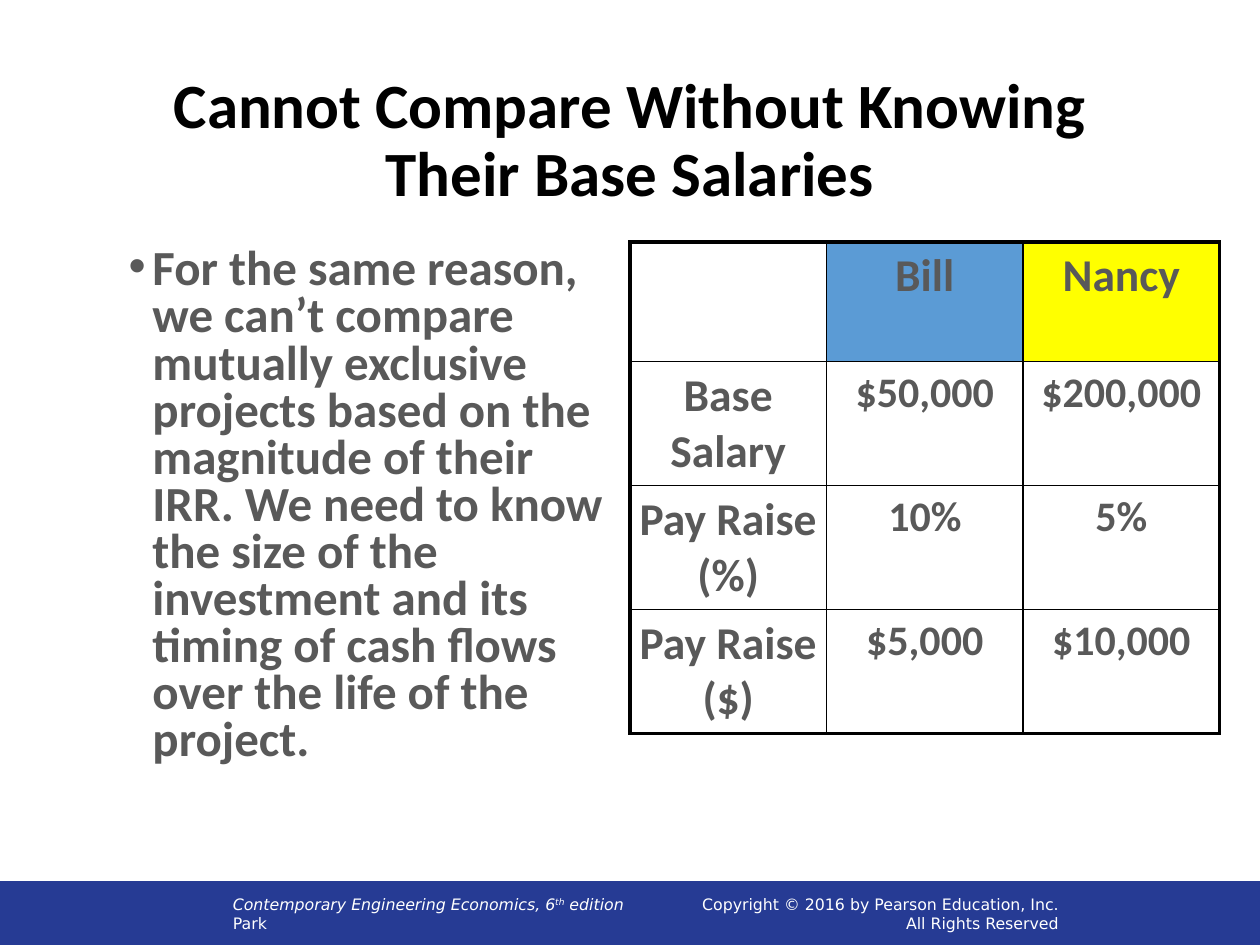
import pptx
import pptx.dml.color
import pptx.enum.shapes
import pptx.enum.text
import pptx.oxml
import pptx.oxml.ns
import pptx.util
from lxml import etree

Inches = pptx.util.Inches
Pt = pptx.util.Pt
RGBColor = pptx.dml.color.RGBColor
Align = pptx.enum.text.PP_ALIGN
Anchor = pptx.enum.text.MSO_ANCHOR

BLACK = RGBColor(0x00, 0x00, 0x00)
WHITE = RGBColor(0xFF, 0xFF, 0xFF)
GRAY = RGBColor(0x59, 0x59, 0x59)
NAVY = RGBColor(0x26, 0x3B, 0x94)
BLUE = RGBColor(0x5B, 0x9B, 0xD5)
YELLOW = RGBColor(0xFF, 0xFF, 0x00)

SALARIES = [
    ["", "Bill", "Nancy"],
    ["Base Salary", "$50,000", "$200,000"],
    ["Pay Raise (%)", "10%", "5%"],
    ["Pay Raise ($)", "$5,000", "$10,000"],
]
HEADER_FILLS = {(0, 1): BLUE, (0, 2): YELLOW}


class SlideBuilder:
    main_font = "Calibri"
    footer_font = "DejaVu Sans"
    thin, thick = Pt(1), Pt(2.25)

    def __init__(self, slide):
        self.slide = slide

    def add_run(self, paragraph, text, size, color, bold=True, italic=False,
                font_name=main_font):
        run = paragraph.add_run()
        run.text = text
        run.font.name = font_name
        run.font.size = Pt(size)
        run.font.bold = bold
        run.font.italic = italic
        run.font.color.rgb = color
        return run

    def place(self, shape, left, top, width, height):
        shape.left, shape.top = Inches(left), Inches(top)
        shape.width, shape.height = Inches(width), Inches(height)
        shape.text_frame.word_wrap = True
        shape.text_frame.auto_size = pptx.enum.text.MSO_AUTO_SIZE.NONE

    def title(self, text, box):
        shape = self.slide.shapes.title
        self.place(shape, *box)
        shape.text_frame.vertical_anchor = Anchor.MIDDLE
        paragraph = shape.text_frame.paragraphs[0]
        paragraph.alignment = Align.CENTER
        paragraph.line_spacing = 0.9
        self.add_run(paragraph, text, 36, BLACK)

    def bullet(self, text, box):
        shape = self.slide.placeholders[1]
        self.place(shape, *box)
        paragraph = shape.text_frame.paragraphs[0]
        properties = paragraph._p.get_or_add_pPr()
        properties.set("marL", str(Inches(0.19)))
        properties.set("indent", str(Inches(-0.19)))
        paragraph.line_spacing = 0.8
        paragraph.space_before = Pt(0)
        font = etree.SubElement(properties, pptx.oxml.ns.qn("a:buFont"))
        font.set("typeface", "Arial")
        mark = etree.SubElement(properties, pptx.oxml.ns.qn("a:buChar"))
        mark.set("char", "•")
        self.add_run(paragraph, text, 28, GRAY)

    def band(self, left, top, width, height):
        shape = self.slide.shapes.add_shape(
            pptx.enum.shapes.MSO_SHAPE.RECTANGLE,
            Inches(left), Inches(top), Inches(width), Inches(height))
        shape.shadow.inherit = False
        shape.fill.solid()
        shape.fill.fore_color.rgb = NAVY
        shape.line.color.rgb = NAVY
        shape.line.width = Pt(0.75)

    def footer(self, lines, box, alignment):
        """Each line is a list of (text, italic, superscript) pieces."""
        shape = self.slide.shapes.add_textbox(0, 0, 0, 0)
        self.place(shape, *box)
        frame = shape.text_frame
        frame.vertical_anchor = Anchor.MIDDLE
        for index, pieces in enumerate(lines):
            paragraph = frame.add_paragraph() if index else frame.paragraphs[0]
            paragraph.alignment = alignment
            for text, italic, superscript in pieces:
                run = self.add_run(paragraph, text, 9, WHITE, False, italic,
                                   self.footer_font)
                if superscript:
                    run._r.get_or_add_rPr().set("baseline", "30000")

    def border(self, cell, widths):
        """Draw the sides in the order left, right, top, bottom."""
        properties = cell._tc.get_or_add_tcPr()
        for index, (side, width) in enumerate(zip("LRTB", widths)):
            properties.insert(index, pptx.oxml.parse_xml(
                f'<a:ln{side} {pptx.oxml.ns.nsdecls("a")} w="{width}">'
                f'<a:solidFill><a:srgbClr val="{BLACK}"/></a:solidFill>'
                f'</a:ln{side}>'))

    def table(self, rows, fills, left, top, column_width, row_heights):
        row_count, column_count = len(rows), len(rows[0])
        table = self.slide.shapes.add_table(
            row_count, column_count, Inches(left), Inches(top),
            Inches(column_width * column_count),
            Inches(sum(row_heights))).table
        table.first_row = table.horz_banding = False
        for column in table.columns:
            column.width = Inches(column_width)
        for row, height in zip(table.rows, row_heights):
            row.height = Inches(height)
        for r, texts in enumerate(rows):
            for c, text in enumerate(texts):
                cell = table.cell(r, c)
                cell.margin_left = cell.margin_right = Inches(0.05)
                cell.margin_top = cell.margin_bottom = Inches(0.05)
                if (r, c) in fills:
                    cell.fill.solid()
                    cell.fill.fore_color.rgb = fills[r, c]
                else:
                    cell.fill.background()
                outer = (c == 0, c == column_count - 1,
                         r == 0, r == row_count - 1)
                self.border(cell, [self.thick if edge else self.thin
                                   for edge in outer])
                if text:
                    paragraph = cell.text_frame.paragraphs[0]
                    paragraph.alignment = Align.CENTER
                    is_heading = r == 0 or c == 0
                    self.add_run(paragraph, text, 26 if is_heading else 24,
                                 GRAY)


def main():
    presentation = pptx.Presentation()
    presentation.slide_width = Inches(10)
    presentation.slide_height = Inches(7.5)
    builder = SlideBuilder(
        presentation.slides.add_slide(presentation.slide_layouts[1]))

    builder.band(0, 7, 10, 0.5)
    builder.footer(
        [[("Contemporary Engineering Economics, 6", True, False),
          ("th", True, True), (" edition", True, False)],
         [("Park", False, False)]],
        (1.75, 7, 6.16, 0.5), Align.LEFT)
    builder.footer(
        [[("Copyright © 2016 by Pearson Education, Inc.", False, False)],
         [("All Rights Reserved", False, False)]],
        (4.92, 7, 3.58, 0.5), Align.RIGHT)
    builder.title("Cannot Compare Without Knowing Their Base Salaries",
                  (0.69, 0.4, 8.62, 1.45))
    builder.table(SALARIES, HEADER_FILLS, 5, 1.92, 1.56,
                  [0.95, 0.98, 0.98, 0.98])
    builder.bullet(
        "For the same reason, we can’t compare mutually exclusive projects "
        "based on the magnitude of their IRR. We need to know the size of "
        "the investment and its timing of cash flows over the life of the "
        "project.",
        (0.92, 1.92, 4, 4.76))
    presentation.save("out.pptx")


if __name__ == "__main__":
    main()
